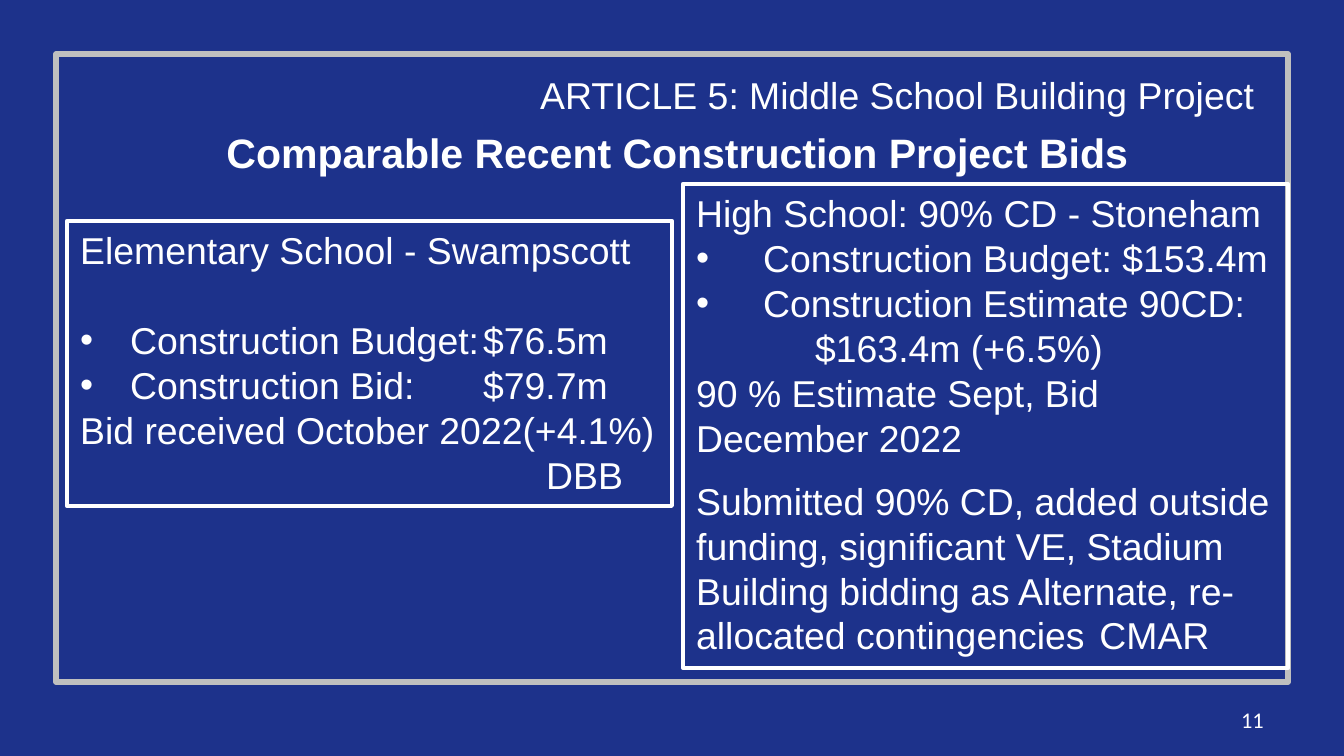
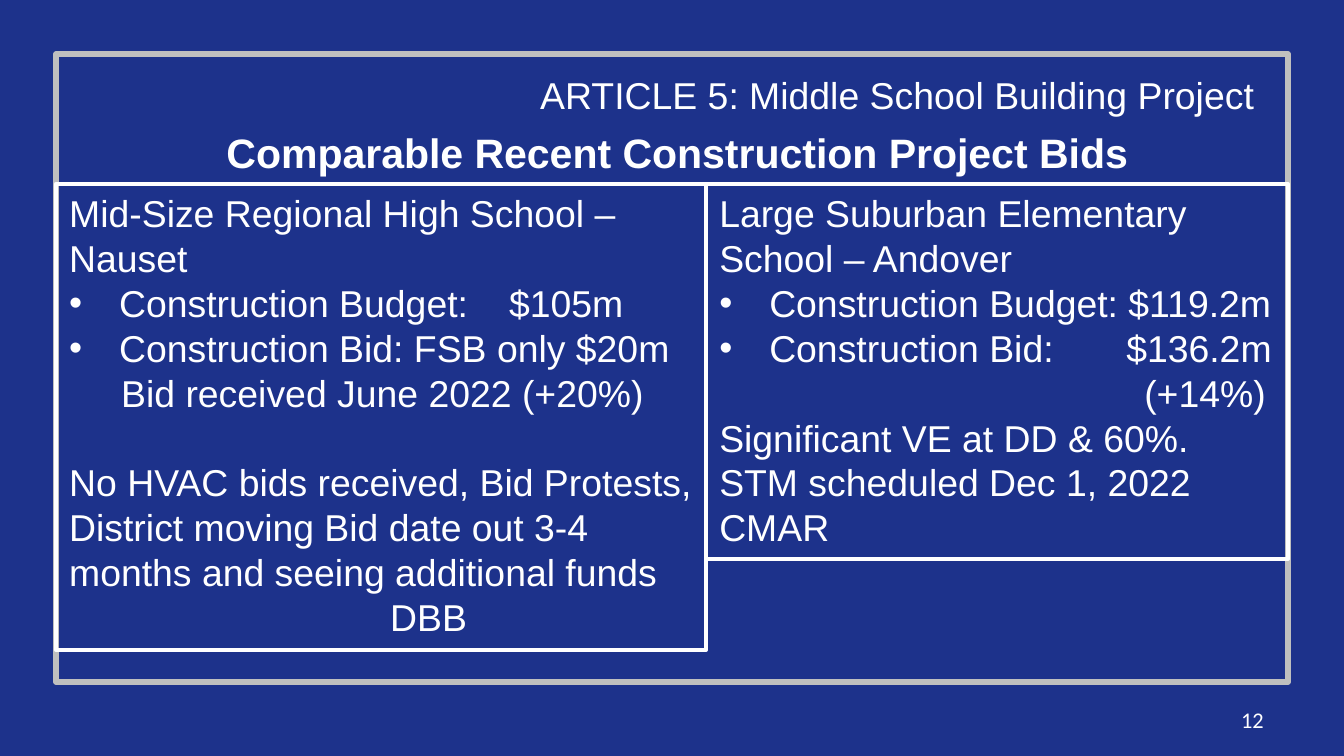
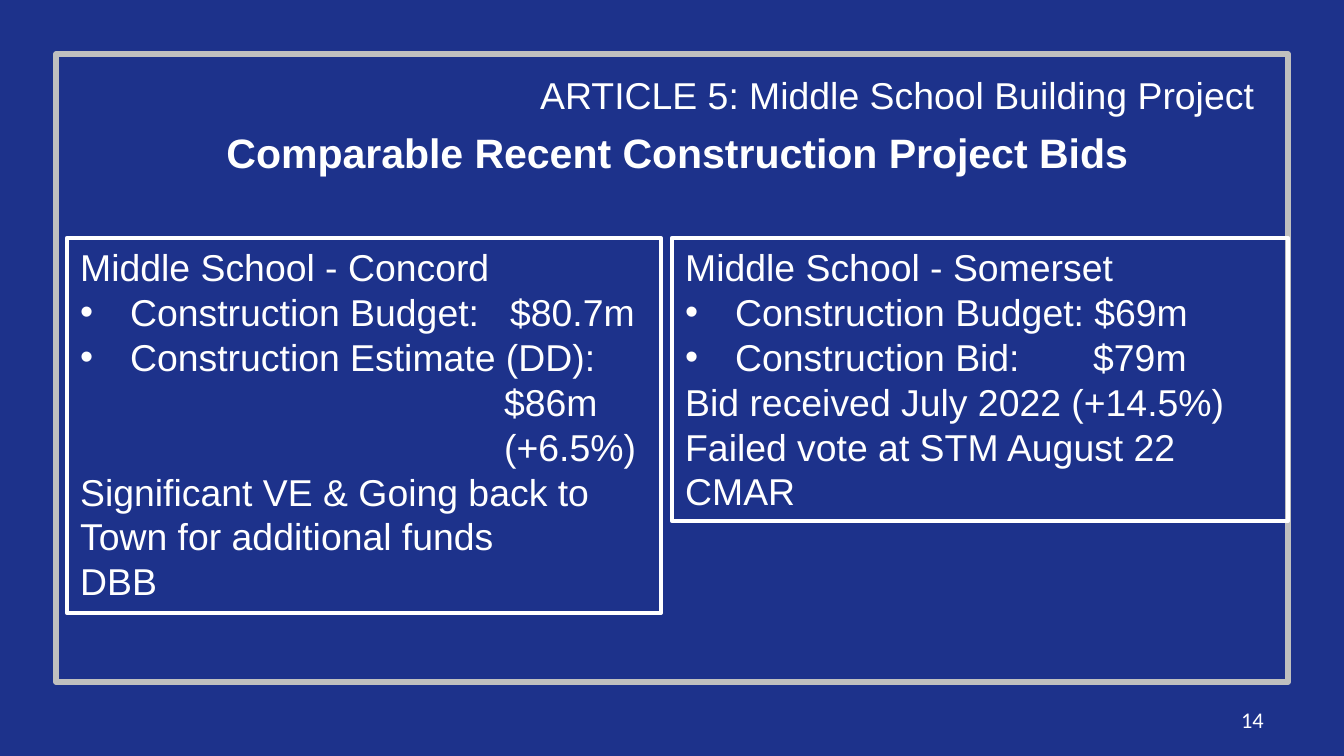
import dataclasses

import pptx
import pptx.dml.color
import pptx.enum.shapes
import pptx.enum.text
import pptx.oxml
import pptx.oxml.ns
import pptx.util

NAVY = pptx.dml.color.RGBColor(0x1D, 0x32, 0x8B)
SILVER = pptx.dml.color.RGBColor(0xBF, 0xBF, 0xBF)
WHITE = pptx.dml.color.RGBColor(0xFF, 0xFF, 0xFF)

EMU_PER_PX = 914400 / 134.4
TITLE_ONLY = 5
BULLET_HANG = 50
ARTICLE = "ARTICLE 5: Middle School Building Project"
TITLE = "Comparable Recent Construction Project Bids"


def px(length):
    return round(length * EMU_PER_PX)


@dataclasses.dataclass
class Line:
    text: str
    hang: int = 0
    indent: int = 0
    tab: int = 0
    gap: int = 0


def bullet(text, hang=BULLET_HANG, tab=0, gap=0):
    return Line(text, hang=hang, indent=hang, tab=tab, gap=gap)


class Deck:
    font = "Arial"
    size = 20
    line_height = 24

    def __init__(self):
        self.presentation = pptx.Presentation()
        self.presentation.slide_width = px(1344)
        self.presentation.slide_height = px(756)
        fill = self.presentation.slide_master.background.fill
        fill.solid()
        fill.fore_color.rgb = NAVY
        self.slide = None

    def add_slide(self, number):
        layout = self.presentation.slide_layouts[TITLE_ONLY]
        self.slide = self.presentation.slides.add_slide(layout)
        self.rectangle(56, 54, 1232, 628, SILVER, 3)
        self.title()
        self.page_number(number)
        self.text_box(527, 66, 750, 59, [Line(ARTICLE)])

    def title(self):
        shape = self.slide.shapes.title
        shape.left, shape.top, shape.width, shape.height = map(px, (67, 125, 1221, 54))
        frame = shape.text_frame
        frame.auto_size = pptx.enum.text.MSO_AUTO_SIZE.NONE
        frame.vertical_anchor = pptx.enum.text.MSO_ANCHOR.MIDDLE
        paragraph = frame.paragraphs[0]
        paragraph.alignment = pptx.enum.text.PP_ALIGN.CENTER
        self.run(paragraph, TITLE, size=22, bold=True)

    def page_number(self, number):
        shape = self.slide.shapes.add_textbox(*map(px, (964, 700, 313, 40)))
        frame = shape.text_frame
        frame.word_wrap = True
        frame.vertical_anchor = pptx.enum.text.MSO_ANCHOR.MIDDLE
        paragraph = frame.paragraphs[0]
        paragraph.alignment = pptx.enum.text.PP_ALIGN.RIGHT
        self.run(paragraph, str(number), size=12, font="Calibri")

    def rectangle(self, left, top, width, height, color, weight):
        shape = self.slide.shapes.add_shape(
            pptx.enum.shapes.MSO_SHAPE.RECTANGLE, *map(px, (left, top, width, height)))
        shape.shadow.inherit = False
        shape.fill.background()
        shape.line.color.rgb = color
        shape.line.width = pptx.util.Pt(weight)
        return shape

    def panel(self, left, top, width, height, lines):
        shape = self.rectangle(left, top, width, height, WHITE, 2.25)
        self.add_lines(shape.text_frame, lines)

    def text_box(self, left, top, width, height, lines):
        shape = self.slide.shapes.add_textbox(*map(px, (left, top, width, height)))
        self.add_lines(shape.text_frame, lines)

    def add_lines(self, frame, lines):
        frame.word_wrap = True
        frame.vertical_anchor = pptx.enum.text.MSO_ANCHOR.TOP
        for index, line in enumerate(lines):
            paragraph = frame.add_paragraph() if index else frame.paragraphs[0]
            self.format_paragraph(paragraph, line)
            for row, text in enumerate(line.text.split("\n")):
                if row:
                    paragraph.add_line_break()
                self.run(paragraph, text)

    def format_paragraph(self, paragraph, line):
        paragraph.alignment = pptx.enum.text.PP_ALIGN.LEFT
        paragraph.line_spacing = pptx.util.Pt(self.line_height)
        if line.gap:
            paragraph.space_before = pptx.util.Pt(line.gap)
        properties = paragraph._p.get_or_add_pPr()
        properties.set("marL", str(px(line.indent)))
        properties.set("indent", str(-px(line.hang)))
        namespace = pptx.oxml.ns.nsdecls("a")
        if line.hang:
            properties.append(pptx.oxml.parse_xml(f'<a:buFont {namespace} typeface="Arial"/>'))
            properties.append(pptx.oxml.parse_xml(f'<a:buChar {namespace} char="•"/>'))
        if line.tab:
            properties.append(pptx.oxml.parse_xml(
                f'<a:tabLst {namespace}><a:tab pos="{px(line.tab)}" algn="l"/></a:tabLst>'))

    def run(self, paragraph, text, size=size, font=font, bold=False):
        run = paragraph.add_run()
        run.text = text
        run.font.name = font
        run.font.size = pptx.util.Pt(size)
        run.font.bold = bold
        run.font.color.rgb = WHITE


def add_swampscott_and_stoneham(deck):
    deck.add_slide(11)
    deck.panel(67, 221, 605, 285, [
        Line("Elementary School - Swampscott"),
        bullet("Construction Budget:\t$76.5m", tab=403, gap=24),
        bullet("Construction Bid:\t$79.7m", tab=403),
        Line("Bid received October 2022(+4.1%)"),
        Line("DBB", indent=466),
    ])
    deck.panel(683, 184, 605, 484, [
        Line("High School: 90% CD - Stoneham"),
        bullet("Construction Budget: $153.4m", hang=67),
        bullet("Construction Estimate 90CD:", hang=67),
        Line("$163.4m (+6.5%)", indent=119),
        Line("90 % Estimate Sept, Bid December 2022"),
        Line("Submitted 90% CD, added outside funding, significant VE, Stadium "
             "Building bidding as Alternate, re-allocated contingencies\tCMAR",
             tab=461, gap=10),
    ])


def add_nauset_and_andover(deck):
    deck.add_slide(12)
    deck.panel(56, 184, 650, 466, [
        Line("Mid-Size Regional High School – Nauset"),
        bullet("Construction Budget:\t$105m", tab=440),
        bullet("Construction Bid: FSB only $20m"),
        Line("Bid received June 2022 (+20%)", indent=52),
        Line("No HVAC bids received, Bid Protests, District moving Bid date "
             "out 3-4 months and seeing additional funds", gap=24),
        Line("DBB", indent=321),
    ])
    deck.panel(706, 184, 582, 375, [
        Line("Large Suburban Elementary School – Andover"),
        bullet("Construction Budget: $119.2m"),
        bullet("Construction Bid:\t$136.2m", tab=407),
        Line("(+14%)", indent=425),
        Line("Significant VE at DD & 60%.\nSTM scheduled Dec 1, 2022"),
        Line("CMAR"),
    ])


def add_concord_and_somerset(deck):
    deck.add_slide(14)
    deck.panel(67, 238, 594, 375, [
        Line("Middle School - Concord"),
        bullet("Construction Budget:\t$80.7m", tab=430),
        bullet("Construction Estimate (DD):"),
        Line("$86m", indent=424),
        Line("(+6.5%)", indent=424),
        Line("Significant VE & Going back to Town for additional funds"),
        Line("DBB"),
    ])
    deck.panel(672, 238, 616, 283, [
        Line("Middle School - Somerset"),
        bullet("Construction Budget: $69m"),
        bullet("Construction Bid:\t$79m", tab=408),
        Line("Bid received July 2022 (+14.5%)"),
        Line("Failed vote at STM August 22"),
        Line("CMAR"),
    ])


def main():
    deck = Deck()
    add_swampscott_and_stoneham(deck)
    add_nauset_and_andover(deck)
    add_concord_and_somerset(deck)
    deck.presentation.save("out.pptx")


if __name__ == "__main__":
    main()
